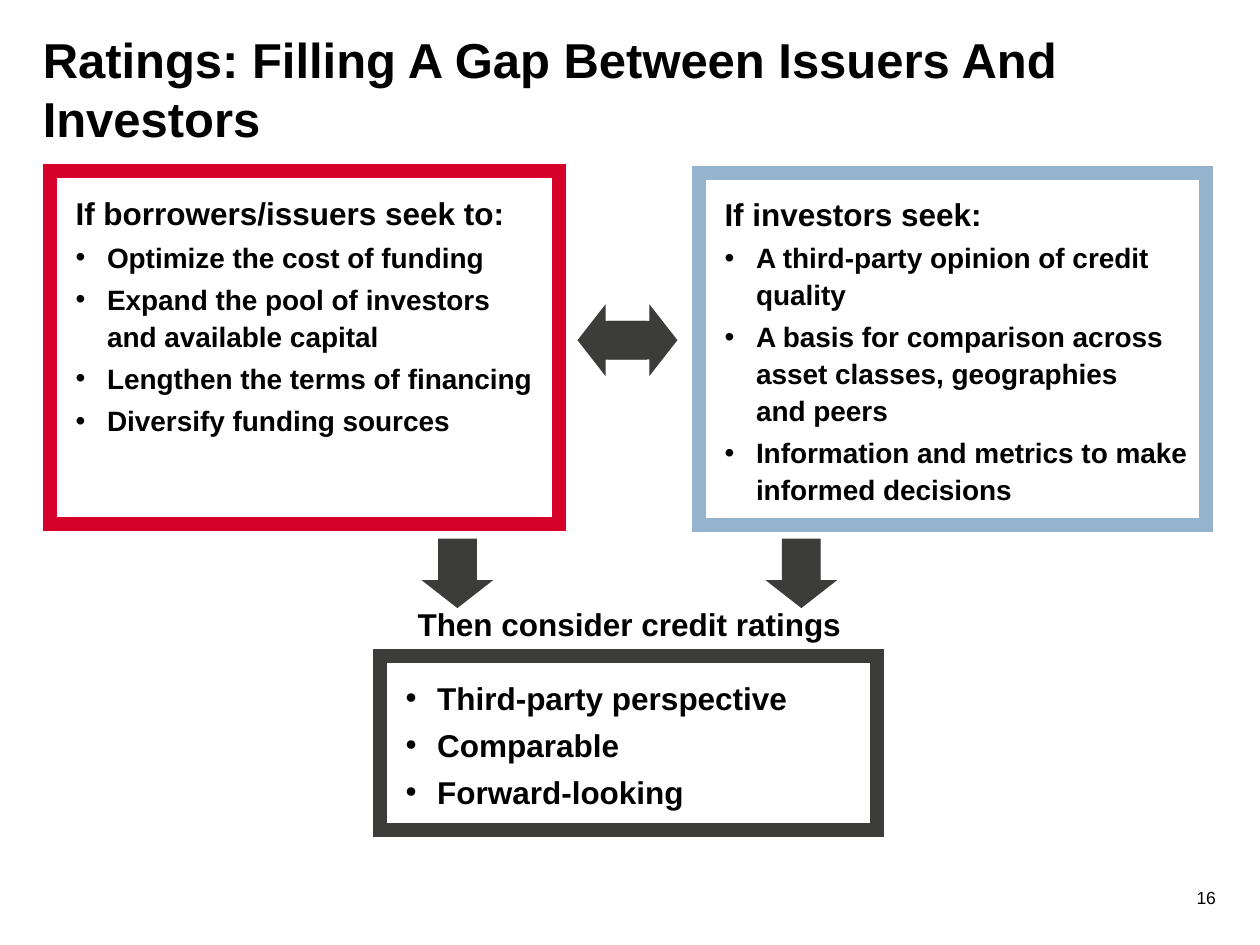
from copy import deepcopy
from dataclasses import dataclass

from lxml.etree import SubElement
from pptx import Presentation
from pptx.dml.color import RGBColor as RGB
from pptx.enum.shapes import MSO_SHAPE as SHAPE
from pptx.enum.text import MSO_ANCHOR as ANCHOR, PP_ALIGN as ALIGN
from pptx.oxml.ns import qn
from pptx.util import Pt

PX = 9144


@dataclass(frozen=True)
class Theme:
    """Colours, font and type sizes of the slide."""
    ink: str = "000000"
    red: str = "D6002A"
    blue: str = "95B3CC"
    dark: str = "3C3C3B"
    font: str = "Arial"
    title: int = 28
    head: int = 18
    body: int = 16
    small: int = 10


def put_text(p, text, size, theme, bold=True, align=ALIGN.LEFT, bullet=False):
    """Write formatted text into a paragraph."""
    pPr = p._p.get_or_add_pPr()
    if bullet:
        pPr.set("marL", str(25 * PX))
        pPr.set("indent", str(-25 * PX))
        SubElement(pPr, qn("a:buFont")).set("typeface", theme.font)
        SubElement(pPr, qn("a:buChar")).set("char", "•")
    p.alignment = align
    p.text = text
    for r in p.runs:
        f = r.font
        f.name, f.size, f.bold = theme.font, Pt(size), bold
        f.color.rgb = RGB.from_string(theme.ink)
    for br in p._p.findall(qn("a:br")):
        br.append(deepcopy(p.runs[0]._r.rPr))


class Deck:
    """Holds the theme and the current slide."""

    def __init__(self, prs, theme):
        """Add a blank slide."""
        self.theme = theme
        self.s = prs.slides.add_slide(prs.slide_layouts[6])

    def frame(self, tf, insets, anchor):
        """Set wrapping, insets and anchor of a text frame."""
        tf.word_wrap = True
        tf.vertical_anchor = anchor
        tf.margin_left, tf.margin_top, tf.margin_right, tf.margin_bottom = (
            i * PX for i in insets)

    def label(self, at, text, size, insets=(0, 0, 0, 0), anchor=ANCHOR.TOP, **fmt):
        """Add a single-paragraph text box."""
        tf = self.s.shapes.add_textbox(*(v * PX for v in at)).text_frame
        self.frame(tf, insets, anchor)
        put_text(tf.paragraphs[0], text, size, self.theme, **fmt)

    def shape(self, kind, at, color, width):
        """Add a preset shape with an outline and no shadow."""
        sp = self.s.shapes.add_shape(kind, *(v * PX for v in at))
        sp.shadow.inherit = False
        sp.line.color.rgb = RGB.from_string(color)
        sp.line.width = Pt(width)
        ln = sp._element.spPr.find(qn("a:ln"))
        SubElement(ln, qn("a:miter")).set("lim", "800000")
        return sp

    def panel(self, at, color, bullets, size, heading=None, anchor=ANCHOR.TOP):
        """Add an outlined box with an optional heading and bullets."""
        sp = self.shape(SHAPE.RECTANGLE, at, color, 8)
        sp.fill.background()
        tf = sp.text_frame
        self.frame(tf, (20, 15, 10, 15), anchor)
        rows = [(heading, self.theme.head, False)] if heading else []
        rows += [(b, size, True) for b in bullets]
        for i, (text, pt, bullet) in enumerate(rows):
            p = tf.add_paragraph() if i else tf.paragraphs[0]
            p.line_spacing = 1.1
            if i:
                p.space_before = Pt(3)
            put_text(p, text, pt, self.theme, bullet=bullet)

    def arrow(self, x, y, rotation):
        """Add a block arrow turned by the given angle."""
        sp = self.shape(SHAPE.RIGHT_ARROW, (x, y, 54, 54), self.theme.dark, 0.75)
        sp.fill.solid()
        sp.fill.fore_color.rgb = RGB.from_string(self.theme.dark)
        sp.adjustments[0], sp.adjustments[1] = 0.55, 0.39
        sp.rotation = rotation


def main():
    """Build and save the slide."""
    prs = Presentation()
    prs.slide_width, prs.slide_height = 1000 * PX, 750 * PX
    t = Theme()
    d = Deck(prs, t)
    d.label((34, 23, 966, 94), "Ratings: Filling A Gap Between Issuers And Investors",
            t.title, anchor=ANCHOR.BOTTOM)
    d.panel((40, 136, 404, 280), t.red, (
        "Optimize the cost of funding",
        "Expand the pool of investors and available capital",
        "Lengthen the terms of financing",
        "Diversify funding sources",
    ), t.body, heading="If borrowers/issuers seek to:")
    d.panel((555, 137, 402, 280), t.blue, (
        "A third-party opinion of credit quality",
        "A basis for comparison across asset classes, geographies \vand peers",
        "Information and metrics to make informed decisions",
    ), t.body, heading="If investors seek:", anchor=ANCHOR.BOTTOM)
    d.panel((302, 521, 394, 138), t.dark,
            ("Third-party perspective", "Comparable", "Forward-looking"), t.head)
    d.label((290, 475, 419, 40), "Then consider credit ratings", t.head,
            insets=(10, 5, 10, 5), align=ALIGN.CENTER)
    for x, y, rotation in ((483, 243, 0), (459, 243, 180), (336, 428, 90), (609, 428, 90)):
        d.arrow(x, y, rotation)
    d.label((942, 704, 23, 28), "16", t.small, bold=False, align=ALIGN.RIGHT)
    prs.save("out.pptx")


if __name__ == "__main__":
    main()
